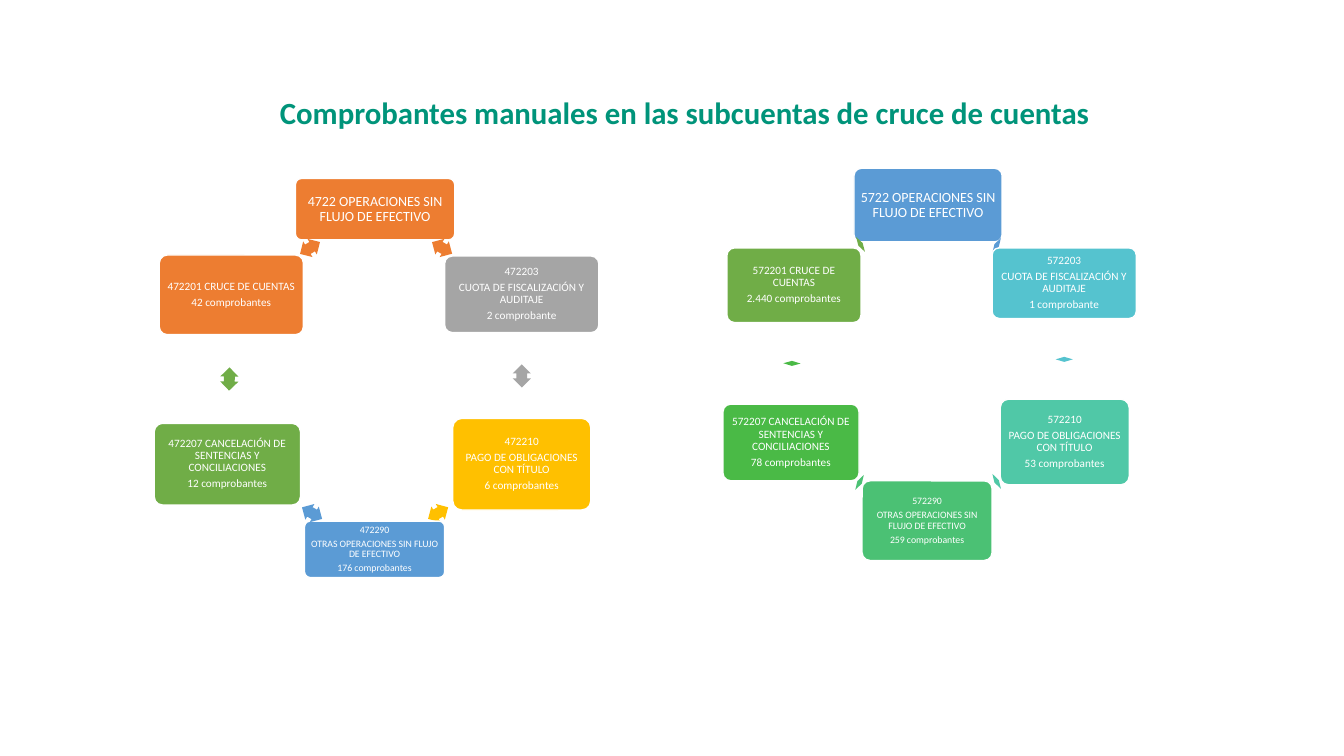
from pptx import Presentation
from pptx.dml.color import RGBColor
from pptx.enum.shapes import MSO_SHAPE as Shape
from pptx.enum.text import MSO_ANCHOR as Anchor, MSO_AUTO_SIZE as AutoSize, PP_ALIGN as Align
from pptx.util import Inches, Pt

TITLE = "Comprobantes manuales en las subcuentas de cruce de cuentas"
FONT = "Calibri"
WHITE = RGBColor(0xFF, 0xFF, 0xFF)
TEAL = RGBColor(0x00, 0x94, 0x7A)
ORANGE = RGBColor(0xED, 0x7D, 0x31)
GREY = RGBColor(0xA5, 0xA5, 0xA5)
GOLD = RGBColor(0xFF, 0xC0, 0x00)
BLUE = RGBColor(0x5B, 0x9B, 0xD5)
GREEN = RGBColor(0x70, 0xAD, 0x47)
CYAN = RGBColor(0x55, 0xC3, 0xCF)
AQUA = RGBColor(0x50, 0xC8, 0xA7)
MINT = RGBColor(0x4B, 0xC1, 0x74)
LIME = RGBColor(0x4A, 0xBA, 0x46)

# Both cycles run clockwise from the top and share text sizes and arrow angles.
TEXT_SIZES = [10, 8, 8, 7, 8, 8]
ARROW_ANGLES = [30, 90, 150, 210, 271.1, 329.2]

# Each account: lines, colour, box (left, top, width, height), arrow (left, top)
INCOME_CYCLE = [
    (["4722 OPERACIONES SIN FLUJO DE EFECTIVO"],
     ORANGE, (2.93, 1.77, 1.58, 0.61), (4.27, 2.37)),
    (["472203", "CUOTA DE FISCALIZACIÓN Y AUDITAJE", "2 comprobante"],
     GREY, (4.41, 2.54, 1.53, 0.76), (5.06, 3.64)),
    (["472210", "PAGO DE OBLIGACIONES CON TÍTULO", "6 comprobantes"],
     GOLD, (4.49, 4.15, 1.37, 0.91), (4.23, 5)),
    (["472290", "OTRAS OPERACIONES SIN FLUJO DE EFECTIVO", "176 comprobantes"],
     BLUE, (3.02, 5.17, 1.39, 0.56), (2.98, 5)),
    (["472207 CANCELACIÓN DE SENTENCIAS Y CONCILIACIONES", "12 comprobantes"],
     GREEN, (1.53, 4.2, 1.45, 0.81), (2.16, 3.67)),
    (["472201 CRUCE DE CUENTAS", "42 comprobantes"],
     ORANGE, (1.58, 2.53, 1.43, 0.79), (2.96, 2.37)),
]
EXPENSE_CYCLE = [
    (["5722 OPERACIONES SIN FLUJO DE EFECTIVO"],
     BLUE, (8.47, 1.67, 1.47, 0.73), (9.86, 2.35)),
    (["572203", "CUOTA DE FISCALIZACIÓN Y AUDITAJE", "1 comprobante"],
     CYAN, (9.84, 2.46, 1.43, 0.7), (10.53, 3.48)),
    (["572210", "PAGO DE OBLIGACIONES CON TÍTULO", "53 comprobantes"],
     AQUA, (9.92, 3.96, 1.28, 0.85), (9.86, 4.69)),
    (["572290", "OTRAS OPERACIONES SIN FLUJO DE EFECTIVO", "259 comprobantes"],
     MINT, (8.55, 4.77, 1.29, 0.79), (8.5, 4.7)),
    (["572207 CANCELACIÓN DE SENTENCIAS Y CONCILIACIONES", "78 comprobantes"],
     LIME, (7.17, 4.01, 1.35, 0.76), (7.83, 3.52)),
    (["572201 CRUCE DE CUENTAS", "2.440 comprobantes"],
     GREEN, (7.21, 2.46, 1.33, 0.74), (8.51, 2.34)),
]
CYCLES = [(INCOME_CYCLE, (0.23, 0.18)), (EXPENSE_CYCLE, (0.05, 0.17))]


def add_filled(page, kind, place, colour, adjustments):
    shape = page.shapes.add_shape(kind, *map(Inches, place))
    shape.shadow.inherit = False
    shape.fill.solid()
    shape.fill.fore_color.rgb = colour
    for index, value in enumerate(adjustments):
        shape.adjustments[index] = value
    return shape


def format_paragraph(para, size, colour, bold=False):
    para.alignment = Align.CENTER
    para.line_spacing = 0.9
    for span in para.runs:
        span.font.name = FONT
        span.font.size = Pt(size)
        span.font.bold = bold
        span.font.color.rgb = colour


def add_account_box(page, lines, colour, place, size):
    box = add_filled(page, Shape.ROUNDED_RECTANGLE, place, colour, [0.1])
    box.line.color.rgb = WHITE
    box.line.width = Pt(1)
    frame = box.text_frame
    frame.word_wrap = True
    frame.vertical_anchor = Anchor.MIDDLE
    inset = Inches(size * 0.004)
    frame.margin_left = frame.margin_right = inset
    frame.margin_top = frame.margin_bottom = inset
    frame.text = "\n".join(lines)
    for para in frame.paragraphs:
        format_paragraph(para, size, WHITE)
        para.space_after = Pt(size * 0.35)


def add_cycle(page, accounts, arrow_size):
    for account, size, angle in zip(accounts, TEXT_SIZES, ARROW_ANGLES):
        lines, colour, place, arrow_place = account
        add_account_box(page, lines, colour, place, size)
        arrow = add_filled(page, Shape.LEFT_RIGHT_ARROW,
                           arrow_place + arrow_size, colour, [0.6, 0.5])
        arrow.line.fill.background()
        arrow.rotation = angle


def add_title(page):
    title = page.shapes.title
    title.left, title.top = Inches(1.53), Inches(0.92)
    title.width, title.height = Inches(10.52), Inches(0.77)
    frame = title.text_frame
    frame.text = TITLE
    frame.word_wrap = True
    frame.auto_size = AutoSize.NONE
    frame.vertical_anchor = Anchor.TOP
    format_paragraph(frame.paragraphs[0], 22, TEAL, bold=True)


def main():
    deck = Presentation()
    deck.slide_width, deck.slide_height = Inches(13.33), Inches(7.5)
    page = deck.slides.add_slide(deck.slide_layouts[5])
    add_title(page)
    for accounts, arrow_size in CYCLES:
        add_cycle(page, accounts, arrow_size)
    deck.save("out.pptx")


if __name__ == "__main__":
    main()
